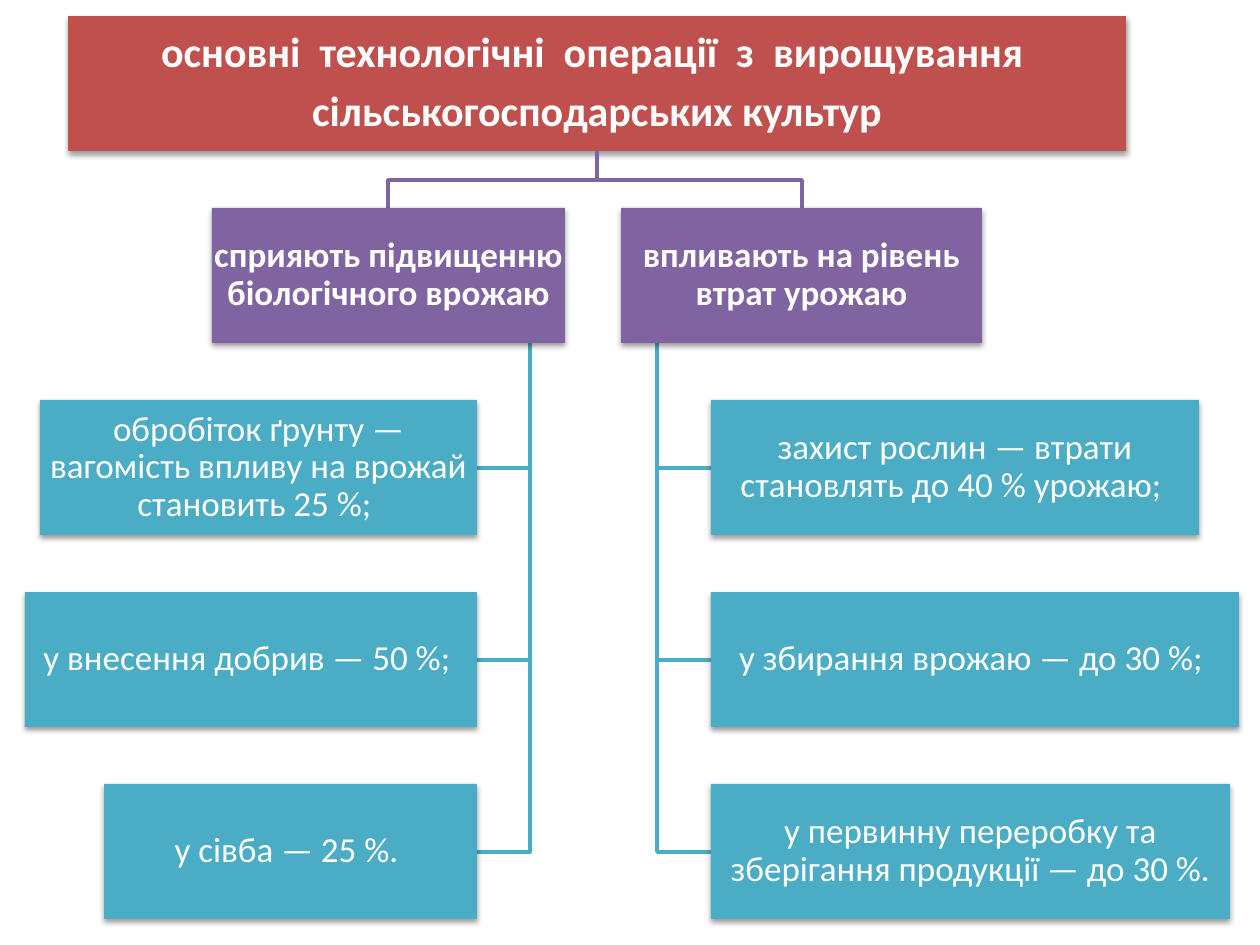
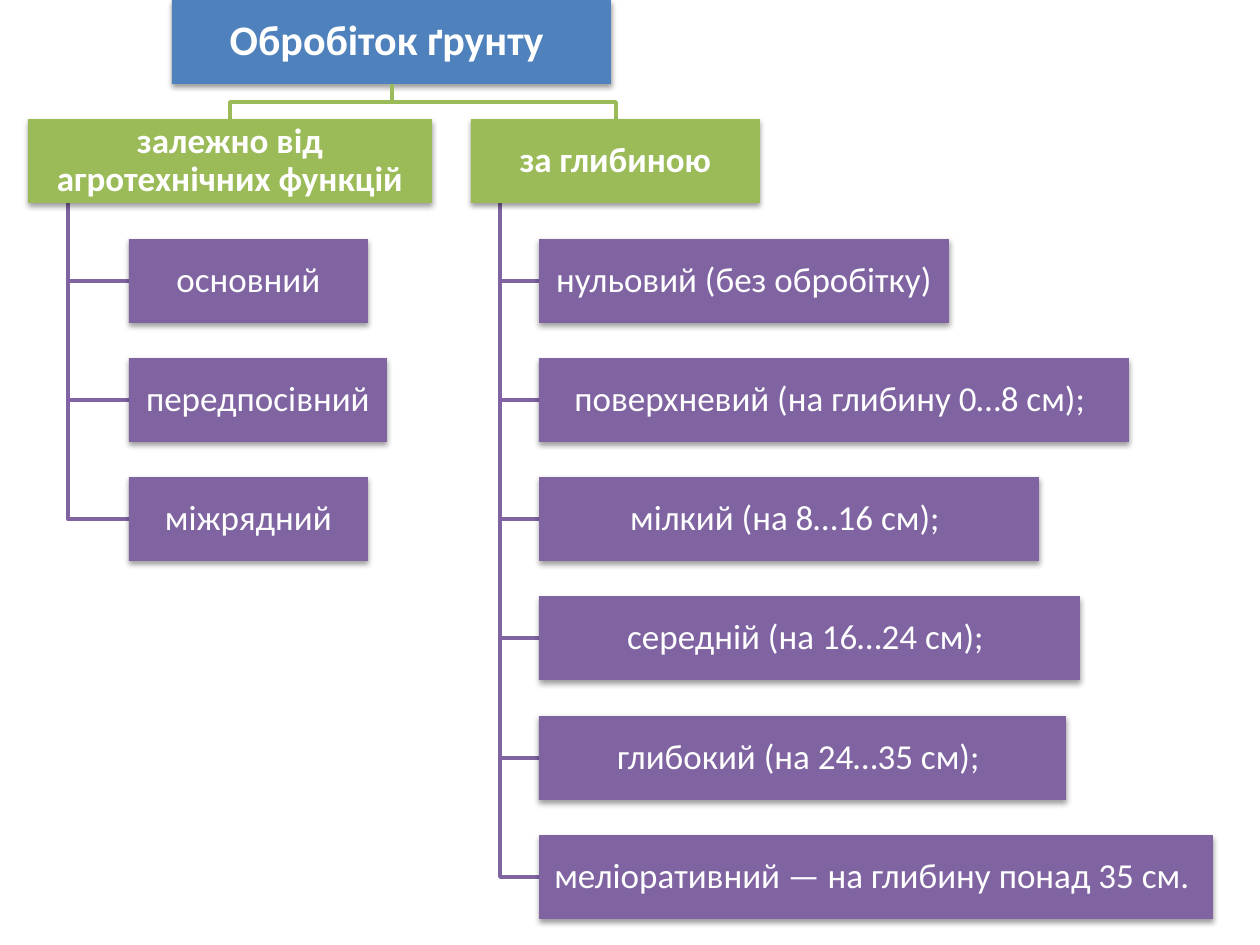
from dataclasses import dataclass

from lxml import etree
from pptx import Presentation
from pptx import util as u
from pptx.dml.color import RGBColor
from pptx.enum import shapes, text
from pptx.oxml.ns import qn

PX = 914400 / 126
FONT = "Calibri"
COLORS = {
    "red": "C0504D",
    "purple": "8064A2",
    "teal": "4BACC6",
    "blue": "4F81BD",
    "green": "9BBB59",
    "white": "FFFFFF",
    "shadow": "000000",
}


@dataclass(frozen=True)
class Node:
    label: str
    left: int
    width: int

    @property
    def right(self) -> int:
        return self.left + self.width

    @property
    def center(self) -> float:
        return self.left + self.width / 2


@dataclass(frozen=True)
class Branch:
    head: Node
    leaves: list[Node]
    leaves_on_left: bool = False

    @property
    def trunk(self) -> float:
        share = 0.9 if self.leaves_on_left else 0.1
        return self.head.left + share * self.head.width


@dataclass(frozen=True)
class Tree:
    root: Node
    branches: list[Branch]
    colors: tuple[str, str, str]
    top: int
    last_top: int
    levels: int
    height: int

    def row_top(self, level: int) -> int:
        return self.top + round(level * (self.last_top - self.top) / self.levels)


@dataclass(frozen=True)
class TextStyle:
    size: int
    bold: bool
    inset: int


ROOT_TEXT = TextStyle(24, True, 2)
HEAD_TEXT = TextStyle(20, True, 1)
LEAF_TEXT = TextStyle(20, False, 1)


def leaves_from(left: int, *items: tuple[str, int]) -> list[Node]:
    return [Node(label, left, width) for label, width in items]


def leaves_to(right: int, *items: tuple[str, int]) -> list[Node]:
    return [Node(label, right - width, width) for label, width in items]


OPERATIONS = Tree(
    root=Node(
        "основні  технологічні  операції  з  вирощування \n"
        "сільськогосподарських культур", 68, 1058),
    branches=[
        Branch(
            Node("сприяють підвищенню біологічного врожаю", 212, 353),
            leaves_to(
                477,
                ("обробіток ґрунту — вагомість впливу на врожай становить 25 %; ", 437),
                ("y внесення добрив — 50 %; ", 452),
                ("y сівба — 25 %. ", 373)),
            leaves_on_left=True),
        Branch(
            Node("впливають на рівень втрат урожаю", 621, 361),
            leaves_from(
                711,
                ("захист рослин — втрати становлять до 40 % урожаю; ", 488),
                ("y збирання врожаю — до 30 %; ", 528),
                ("y первинну переробку та зберігання продукції — до 30 %.", 519))),
    ],
    colors=("red", "purple", "teal"),
    top=16, last_top=784, levels=4, height=135)

TILLAGE = Tree(
    root=Node("Обробіток ґрунту ", 172, 439),
    branches=[
        Branch(
            Node("залежно від агротехнічних функцій", 28, 404),
            leaves_from(
                129,
                ("основний", 239),
                ("передпосівний", 258),
                ("міжрядний", 239))),
        Branch(
            Node("за глибиною", 471, 289),
            leaves_from(
                539,
                ("нульовий (без обробітку)", 410),
                ("поверхневий (на глибину 0…8 см); ", 590),
                ("мілкий (на 8…16 см); ", 500),
                ("середній (на 16…24 см); ", 541),
                ("глибокий (на 24…35 см); ", 527),
                ("меліоративний — на глибину понад 35 см. ", 674))),
    ],
    colors=("blue", "green", "purple"),
    top=0, last_top=835, levels=7, height=84)


def emu(px: float) -> u.Emu:
    return u.Emu(round(px * PX))


def rgb(name: str) -> RGBColor:
    return RGBColor.from_string(COLORS[name])


def add_soft_shadow(box) -> None:
    box.shadow.inherit = False
    effects = box.element.spPr.find(qn("a:effectLst"))
    outer = etree.SubElement(
        effects, qn("a:outerShdw"),
        blurRad="40000", dist="20000", dir="5400000", rotWithShape="0")
    color = etree.SubElement(outer, qn("a:srgbClr"), val=COLORS["shadow"])
    etree.SubElement(color, qn("a:alpha"), val="38000")


def format_box(box, label: str, color: str, style: TextStyle) -> None:
    box.fill.solid()
    box.fill.fore_color.rgb = rgb(color)
    box.line.fill.background()
    add_soft_shadow(box)
    frame = box.text_frame
    frame.text = label
    frame.word_wrap = True
    frame.auto_size = text.MSO_AUTO_SIZE.NONE
    frame.vertical_anchor = text.MSO_ANCHOR.MIDDLE
    frame.margin_left = frame.margin_right = emu(style.inset)
    frame.margin_top = frame.margin_bottom = emu(style.inset)
    for para in frame.paragraphs:
        para.alignment = text.PP_ALIGN.CENTER
        para.line_spacing = 0.9
        para.space_after = u.Pt(8)
        para.font.name = FONT
        para.font.size = u.Pt(style.size)
        para.font.bold = style.bold
        para.font.color.rgb = rgb("white")


def draw_node(page, tree: Tree, node: Node, level: int, color: str, style: TextStyle) -> None:
    box = page.shapes.add_shape(
        shapes.MSO_SHAPE.RECTANGLE, emu(node.left), emu(tree.row_top(level)),
        emu(node.width), emu(tree.height))
    format_box(box, node.label, color, style)


def draw_title(page, tree: Tree, color: str) -> None:
    title = page.shapes.title
    title.left, title.top = emu(tree.root.left), emu(tree.top)
    title.width, title.height = emu(tree.root.width), emu(tree.height)
    format_box(title, tree.root.label, color, ROOT_TEXT)


def draw_path(page, color: str, start: tuple[float, float], *bends: tuple[float, float]) -> None:
    builder = page.shapes.build_freeform(*start, scale=PX)
    builder.add_line_segments(bends, close=False)
    path = builder.convert_to_shape()
    path.shadow.inherit = False
    path.fill.background()
    path.line.color.rgb = rgb(color)
    path.line.width = u.Pt(2)


def draw_links(page, tree: Tree) -> None:
    _, head_color, leaf_color = tree.colors
    root_bottom = tree.top + tree.height
    head_top = tree.row_top(1)
    head_bottom = head_top + tree.height
    fork = (root_bottom + head_top) / 2
    root_x = tree.root.center
    for branch in tree.branches:
        head_x = branch.head.center
        draw_path(page, head_color, (root_x, root_bottom), (root_x, fork),
                  (head_x, fork), (head_x, head_top))
        for level, leaf in enumerate(branch.leaves, start=2):
            middle = tree.row_top(level) + tree.height / 2
            edge = leaf.right if branch.leaves_on_left else leaf.left
            draw_path(page, leaf_color, (branch.trunk, head_bottom),
                      (branch.trunk, middle), (edge, middle))


def draw_tree(page, tree: Tree) -> None:
    root_color, head_color, leaf_color = tree.colors
    draw_links(page, tree)
    draw_title(page, tree, root_color)
    for branch in tree.branches:
        draw_node(page, tree, branch.head, 1, head_color, HEAD_TEXT)
        for level, leaf in enumerate(branch.leaves, start=2):
            draw_node(page, tree, leaf, level, leaf_color, LEAF_TEXT)


def main() -> None:
    deck = Presentation()
    deck.slide_width, deck.slide_height = emu(1260), emu(945)
    title_only = deck.slide_layouts[5]
    for tree in (OPERATIONS, TILLAGE):
        draw_tree(deck.slides.add_slide(title_only), tree)
    deck.save("out.pptx")


if __name__ == "__main__":
    main()
